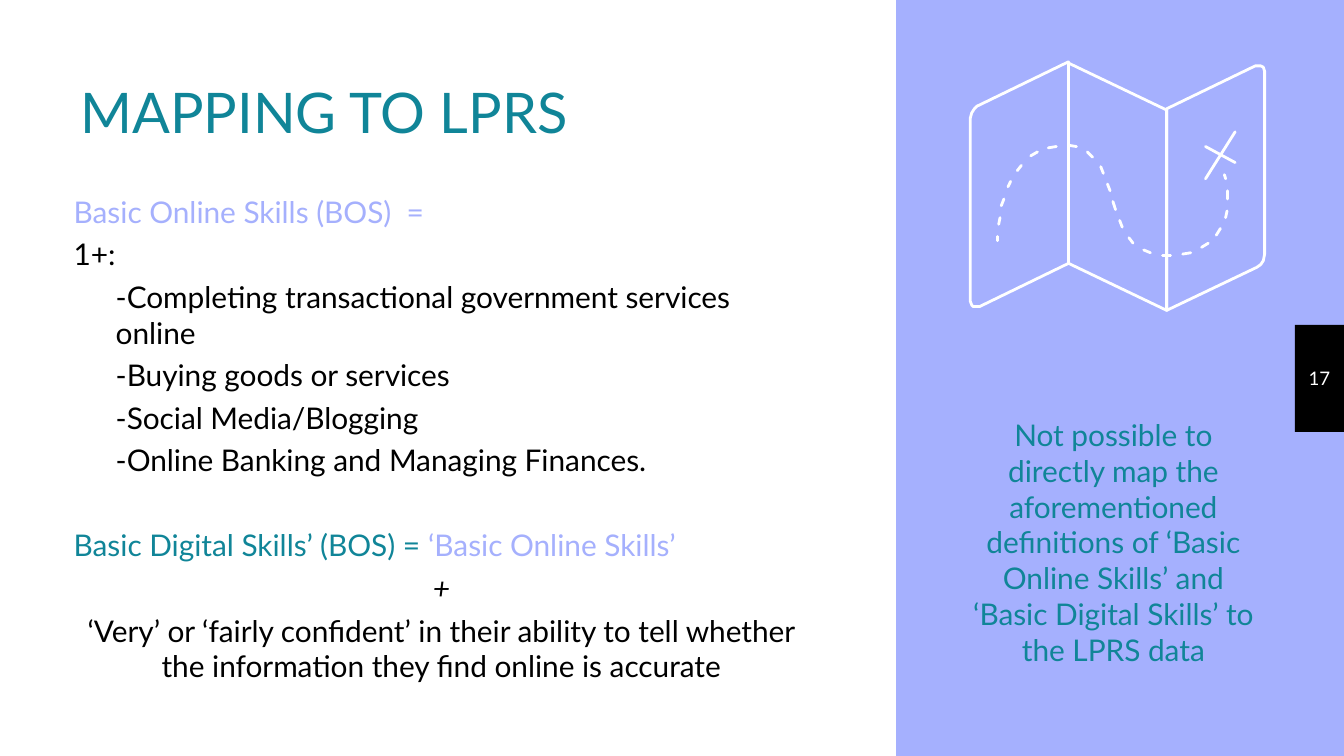
from lxml import etree
from pptx import Presentation, util as u
from pptx.dml.color import RGBColor
from pptx.enum import shapes, text

COLOURS = {
    "lilac": "A5B0FE",
    "pale": "A5B0FD",
    "teal": "108598",
    "white": "FFFFFF",
    "black": "000000",
}

SKILLS = [
    "-Completing transactional government services online",
    "-Buying goods or services",
    "-Social Media/Blogging",
    "-Online Banking and Managing Finances.",
]

MAP_PANELS = [
    [(625, 59), (572.4, 33.8), (572.4, 141.1), (625, 166.3)],
    [(572.4, 33.1), (524.9, 56.2), (523.4, 56.9), (522, 58.3), (520.6, 60.5),
     (519.8, 63.4), (519.8, 161.3), (520.6, 163.4), (521.3, 164.2),
     (522.7, 164.2), (524.9, 164.2), (572.4, 141.1)],
    [(672.5, 35.3), (625, 58.3), (625, 166.3), (673.2, 143.3), (675.4, 141.8),
     (676.8, 139.7), (677.5, 136.1), (677.5, 38.2), (676.8, 36), (675.4, 35.3)],
]

CROSS = [
    [(645.8, 78.5), (661.7, 87.1)],
    [(661.7, 70.6), (645.8, 95.8)],
]

ROUTE_DASHES = [
    [(534.2, 128.9), (534.2, 126.7)],
    [(535, 120.2), (535.7, 116.6)],
    [(536.4, 110.2), (537.8, 106.6)],
    [(540, 100.1), (541.4, 97.2)],
    [(545, 91.4), (547.2, 88.6)],
    [(552.2, 83.5), (555.8, 81.4)],
    [(561.6, 79.2), (565.9, 78.5)],
    [(572.4, 77.8), (576.7, 78.5)],
    [(582.5, 81.4), (585.4, 84.2)],
    [(589.7, 89.3), (591.1, 92.9)],
    [(593.3, 98.6), (594.7, 102.2)],
    [(596.2, 108), (597.6, 112.3)],
    [(599.8, 118.1), (601.2, 121.7)],
    [(604.8, 127.4), (607, 130.3)],
    [(612.7, 133.9), (616.3, 135.4)],
    [(622.8, 136.8), (627.1, 136.8)],
    [(633.6, 136.1), (637.9, 135.4)],
    [(643.7, 132.5), (647.3, 130.3)],
    [(651.6, 126), (653.8, 122.4)],
    [(656.6, 116.6), (657.4, 113)],
    [(657.4, 106.6), (657.4, 102.2)],
    [(656.6, 95.8), (655.9, 93.6)],
]


def colour(name):
    return RGBColor.from_string(COLOURS[name])


def paragraph(*spans, align="LEFT", indent=0, before=0):
    return {"spans": spans, "align": align, "indent": indent, "before": before}


def span(words, size=16, shade="black", italic=False):
    return {"words": words, "size": size, "shade": shade, "italic": italic}


class SlideWriter:
    font = "Lato"
    line_width = 1.5

    def __init__(self, page):
        self.page = page

    def background(self, shade):
        fill = self.page.background.fill
        fill.solid()
        fill.fore_color.rgb = colour(shade)

    def panel(self, left, top, width, height, shade):
        box = self.page.shapes.add_shape(
            shapes.MSO_SHAPE.RECTANGLE, *map(u.Pt, (left, top, width, height)))
        box.shadow.inherit = False
        box.fill.solid()
        box.fill.fore_color.rgb = colour(shade)
        box.line.fill.background()

    def text(self, left, top, width, height, paragraphs, anchor="TOP", inset=7.2):
        box = self.page.shapes.add_textbox(*map(u.Pt, (left, top, width, height)))
        frame = box.text_frame
        frame.word_wrap = True
        frame.vertical_anchor = text.MSO_ANCHOR[anchor]
        frame.margin_left = frame.margin_right = u.Pt(7.2)
        frame.margin_top = frame.margin_bottom = u.Pt(inset)
        for index, item in enumerate(paragraphs):
            para = frame.add_paragraph() if index else frame.paragraphs[0]
            para.alignment = text.PP_ALIGN[item["align"]]
            para.space_before = u.Pt(item["before"])
            properties = para._p.get_or_add_pPr()
            properties.set("marL", str(u.Pt(item["indent"])))
            properties.set("indent", "0")
            for part in item["spans"]:
                run = para.add_run()
                run.text = part["words"]
                run.font.name = self.font
                run.font.size = u.Pt(part["size"])
                run.font.italic = part["italic"]
                run.font.color.rgb = colour(part["shade"])

    def outline(self, group, points, close=False):
        start, *rest = [(u.Pt(x), u.Pt(y)) for x, y in points]
        builder = group.shapes.build_freeform(*start)
        builder.add_line_segments(rest, close=close)
        stroke = builder.convert_to_shape()
        stroke.shadow.inherit = False
        stroke.fill.background()
        stroke.line.color.rgb = colour("white")
        stroke.line.width = u.Pt(self.line_width)
        line = stroke.line._get_or_add_ln()
        line.set("cap", "rnd")
        namespace = etree.QName(line).namespace
        etree.SubElement(line, f"{{{namespace}}}round")

    def map_icon(self):
        group = self.page.shapes.add_group_shape()
        for points in MAP_PANELS:
            self.outline(group, points, close=True)
        for points in CROSS + ROUTE_DASHES:
            self.outline(group, points)


def main():
    deck = Presentation()
    deck.slide_width, deck.slide_height = u.Pt(720), u.Pt(405)
    writer = SlideWriter(deck.slides.add_slide(deck.slide_layouts[6]))

    writer.background("lilac")
    writer.panel(693.7, 174, 26.3, 57.4, "black")
    writer.panel(0, 0, 480, 405, "white")

    body = {"indent": 18, "before": 3.6}
    centred = {**body, "align": "CENTER"}
    writer.text(14.4, 96.5, 426.2, 175, [
        paragraph(span("Basic Online Skills (BOS)  =", shade="pale"), **body),
        paragraph(span("1+:"), **body),
        *[paragraph(span(skill), indent=40.5, before=3.6) for skill in SKILLS],
        paragraph(span("Basic Digital Skills’ (BOS) = ", shade="teal"),
                  span("‘Basic Online Skills’", shade="pale"),
                  indent=18, before=26.4),
        paragraph(span("+", italic=True), **centred),
        paragraph(span("‘Very’ or ‘fairly confident’ in their ability to tell "
                       "whether the information they find online is accurate"),
                  **centred),
    ])
    writer.text(693.7, 173.8, 26.3, 57.4, [
        paragraph(span("17", size=10, shade="white"), align="CENTER"),
    ], anchor="MIDDLE")
    writer.text(36, 17.3, 404.6, 67.7, [
        paragraph(span("MAPPING TO LPRS", size=30, shade="teal")),
    ], anchor="BOTTOM")
    writer.text(493.2, 219.6, 188.6, 143.3, [
        paragraph(span("Not possible to directly map the aforementioned "
                       "definitions of ‘Basic Online Skills’ and ‘Basic Digital "
                       "Skills’ to the LPRS data", shade="teal"), **centred),
    ], inset=3.6)
    writer.map_icon()

    deck.save("out.pptx")


if __name__ == "__main__":
    main()
